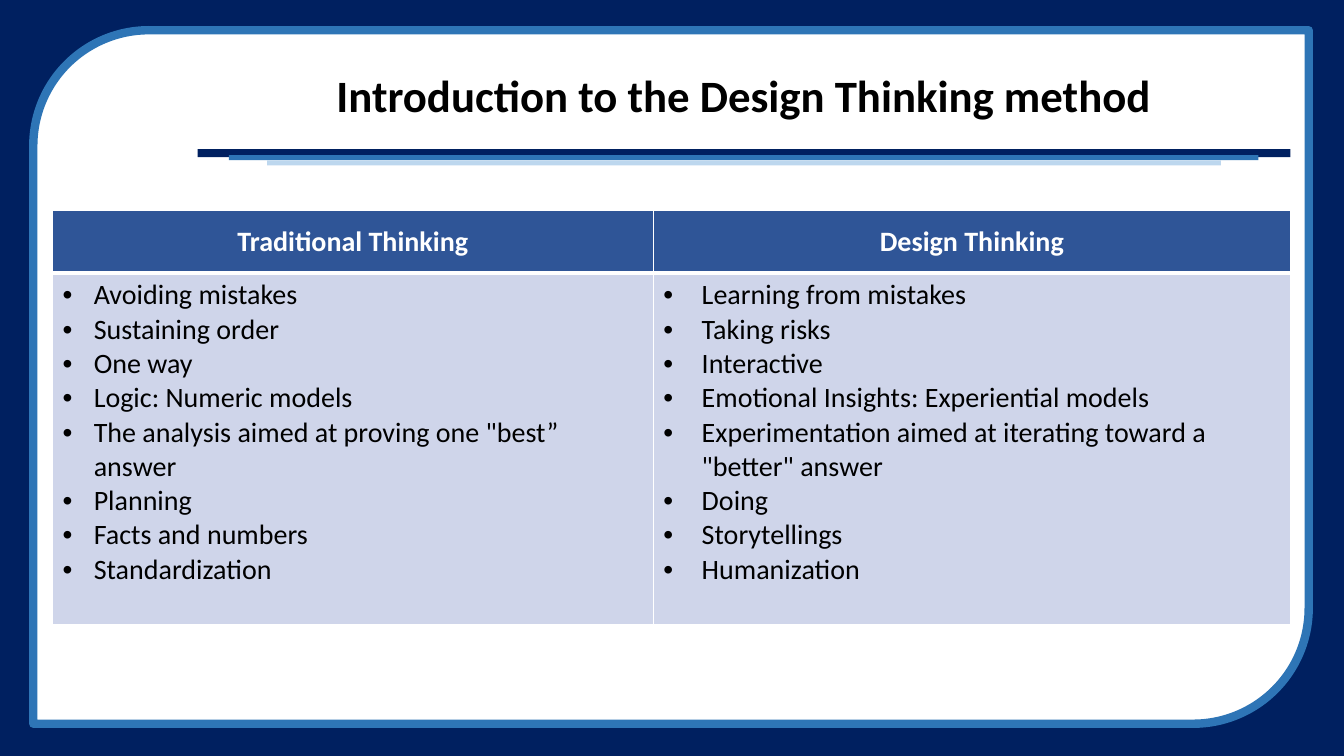
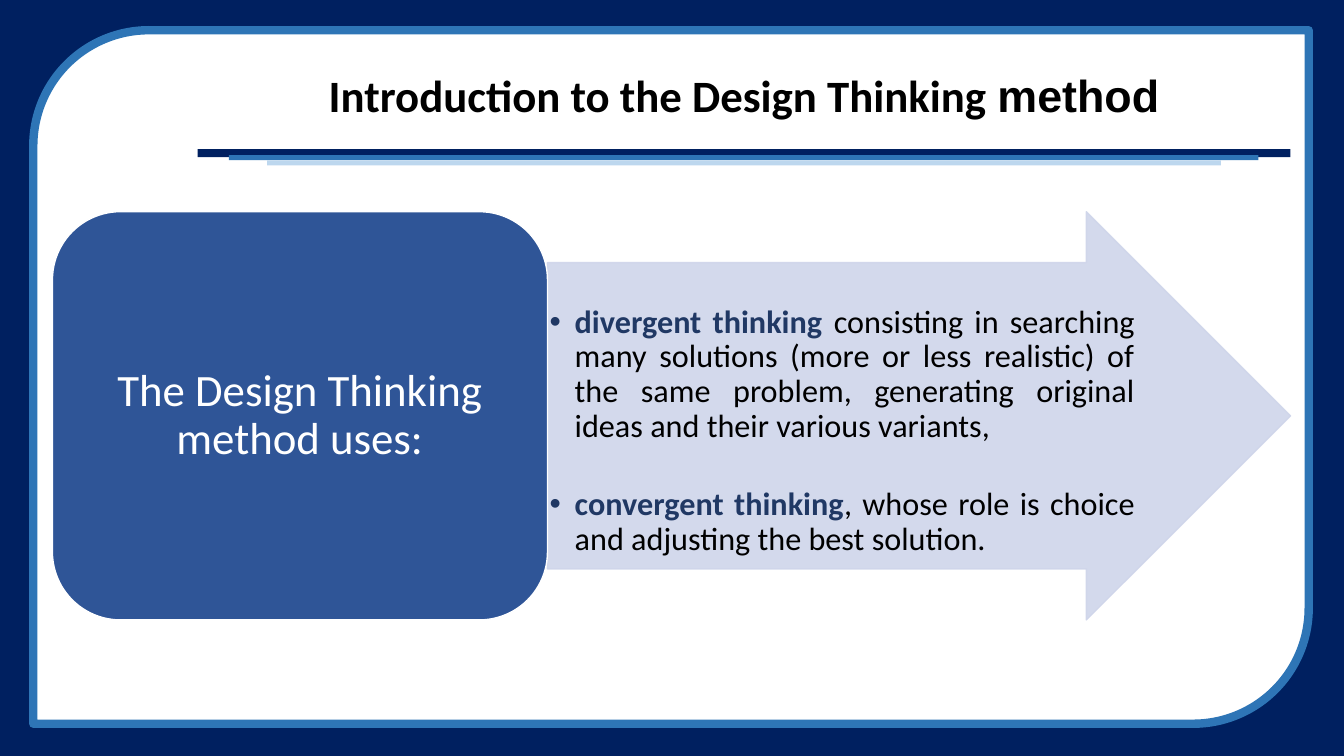
import lxml.etree
import pptx
import pptx.dml.color
import pptx.enum.shapes
import pptx.enum.text
import pptx.oxml.ns
import pptx.util

Inches = pptx.util.Inches
Pt = pptx.util.Pt
SHAPE = pptx.enum.shapes.MSO_SHAPE
ALIGN = pptx.enum.text.PP_ALIGN
MIDDLE = pptx.enum.text.MSO_ANCHOR.MIDDLE
qn = pptx.oxml.ns.qn
rgb = pptx.dml.color.RGBColor.from_string

NAVY, BLUE, PALE_BLUE = "002060", "2E75B6", "BDD7EE"
PANEL, LAVENDER, ACCENT = "2F5597", "CFD5EA", "203864"
WHITE, BLACK = "FFFFFF", "000000"
LEFT, RIGHT = 0.52, 12.8
TITLE_LEFT = 1.96


def add_shape(s, kind, box, fill, line=None, width=1):
    """Add a flat shape; box is left, top, width, height in inches."""
    sp = s.shapes.add_shape(kind, *map(Inches, box))
    sp.shadow.inherit = False
    sp.fill.solid()
    sp.fill.fore_color.rgb = rgb(fill)
    if line:
        sp.line.color.rgb = rgb(line)
        sp.line.width = Pt(width)
    else:
        sp.line.fill.background()
    return sp


def write(p, runs, size, indent=0, **layout):
    """Fill a paragraph with (text, colour, font values) runs; an indent adds a bullet."""
    if indent:
        pPr = p._p.get_or_add_pPr()
        pPr.set("marL", str(Inches(indent)))
        pPr.set("indent", str(-Inches(indent)))
        lxml.etree.SubElement(pPr, qn("a:buFont"), typeface="Arial")
        lxml.etree.SubElement(pPr, qn("a:buChar"), char="•")
    for name, value in layout.items():
        setattr(p, name, value)
    for text, color, values in runs:
        r = p.add_run()
        r.text = text
        for name, value in {"name": "Calibri", "size": Pt(size), "bold": False, **values}.items():
            setattr(r.font, name, value)
        r.font.color.rgb = rgb(color)


BOLD = {"bold": True}
TITLE = "Introduction to the Design Thinking "
TITLES = [
    [(TITLE + "method", BLACK, BOLD)],
    [(TITLE, BLACK, BOLD), ("method", BLACK, {"bold": True, "name": "Arial"})],
]
# left, top, width, height, colour
RULES = [
    (TITLE_LEFT, 1.48, 10.84, 0.08, NAVY),
    (2.27, 1.54, 10.21, 0.05, BLUE),
    (2.65, 1.59, 9.46, 0.05, PALE_BLUE),
]

prs = pptx.Presentation()
prs.slide_width, prs.slide_height = Inches(13.33), Inches(7.5)

# Frame, rules and title on every slide
slides = []
for title in TITLES:
    s = prs.slides.add_slide(prs.slide_layouts[6])
    s.background.fill.solid()
    s.background.fill.fore_color.rgb = rgb(NAVY)
    add_shape(s, SHAPE.ROUND_2_DIAG_RECTANGLE, (0.33, 0.3, 12.65, 6.88), WHITE, BLUE, 6)
    for *box, color in RULES:
        add_shape(s, SHAPE.RECTANGLE, box, color)
    tf = s.shapes.add_textbox(*map(Inches, (TITLE_LEFT, 0.49, 10.84, 0.97))).text_frame
    tf.word_wrap = True
    tf.vertical_anchor = MIDDLE
    write(tf.paragraphs[0], title, 32, alignment=ALIGN.CENTER, line_spacing=0.9)
    slides.append(s)
table_slide, arrow_slide = slides

# Slide 1: comparison table
# heading, column width, bullet indent, points
COLUMNS = [
    ("Traditional Thinking", 5.96, 0.31, [
        "Avoiding mistakes",
        "Sustaining order",
        "One way",
        "Logic: Numeric models",
        'The analysis aimed at proving one "best” answer',
        "Planning",
        "Facts and numbers",
        "Standardization",
    ]),
    ("Design Thinking", 6.32, 0.38, [
        "Learning from mistakes",
        "Taking risks",
        "Interactive",
        "Emotional Insights: Experiential models",
        'Experimentation aimed at iterating toward a "better" answer',
        "Doing",
        "Storytellings",
        "Humanization",
    ]),
]
ROW_HEIGHTS = (0.62, 3.49)
table = table_slide.shapes.add_table(
    len(ROW_HEIGHTS), len(COLUMNS), Inches(LEFT), Inches(2.09),
    Inches(RIGHT - LEFT), Inches(sum(ROW_HEIGHTS))).table
for row, height in zip(table.rows, ROW_HEIGHTS):
    row.height = Inches(height)

for col, (heading, width, indent, points) in enumerate(COLUMNS):
    table.columns[col].width = Inches(width)
    head, body = table.cell(0, col), table.cell(1, col)
    for cell, fill, top, bottom in ((head, PANEL, 1, 3), (body, LAVENDER, 3, 1)):
        tcPr = cell._tc.get_or_add_tcPr()
        for side, weight in (("L", 1), ("R", 1), ("T", top), ("B", bottom)):
            ln = lxml.etree.SubElement(tcPr, qn("a:ln" + side), w=str(Pt(weight)))
            solid = lxml.etree.SubElement(ln, qn("a:solidFill"))
            lxml.etree.SubElement(solid, qn("a:srgbClr"), val=WHITE)
        cell.fill.solid()
        cell.fill.fore_color.rgb = rgb(fill)
    head.vertical_anchor = MIDDLE
    write(head.text_frame.paragraphs[0], [(heading, WHITE, BOLD)], 20, alignment=ALIGN.CENTER)
    tf = body.text_frame
    for i, point in enumerate(points):
        p = tf.add_paragraph() if i else tf.paragraphs[0]
        write(p, [(point, BLACK, {})], 20, indent)

# Slide 2: panel with an arrow
PANEL_WIDTH, PANEL_TOP, PANEL_HEIGHT = 4.91, 2.1, 4.05
ARROW_LEFT = LEFT + PANEL_WIDTH
arrow = add_shape(
    arrow_slide, SHAPE.RIGHT_ARROW,
    (ARROW_LEFT, PANEL_TOP, RIGHT - ARROW_LEFT, PANEL_HEIGHT), LAVENDER, LAVENDER)
arrow.adjustments[0], arrow.adjustments[1] = 0.75, 0.5
for clr in arrow._element.spPr.iter(qn("a:srgbClr")):
    lxml.etree.SubElement(clr, qn("a:alpha"), val="90000")

THINKING = [
    ("divergent thinking ",
     "consisting in searching many solutions (more or less realistic) of the same problem, "
     "generating original ideas and their various variants,"),
    ("convergent thinking", ", whose role is choice and adjusting the best solution."),
]
tf = arrow_slide.shapes.add_textbox(*map(Inches, (ARROW_LEFT, 3.01, 5.85, 2.64))).text_frame
tf.word_wrap = True
for side in ("left", "top", "right", "bottom"):
    setattr(tf, "margin_" + side, Inches(0.02))
for i, (term, meaning) in enumerate(THINKING):
    p = tf.add_paragraph() if i else tf.paragraphs[0]
    write(p, [(term, ACCENT, BOLD), (meaning, BLACK, {})], 23, 0.25,
          alignment=ALIGN.JUSTIFY, line_spacing=0.9, space_before=Pt(31 if i else 0))

panel = add_shape(
    arrow_slide, SHAPE.ROUNDED_RECTANGLE,
    (LEFT, PANEL_TOP, PANEL_WIDTH, PANEL_HEIGHT), PANEL, WHITE)
tf = panel.text_frame
tf.word_wrap = True
tf.vertical_anchor = MIDDLE
tf.margin_left = tf.margin_right = Inches(0.13)
write(tf.paragraphs[0], [("The Design Thinking method uses:", WHITE, {})], 32,
      alignment=ALIGN.CENTER, line_spacing=0.9)

prs.save("out.pptx")
